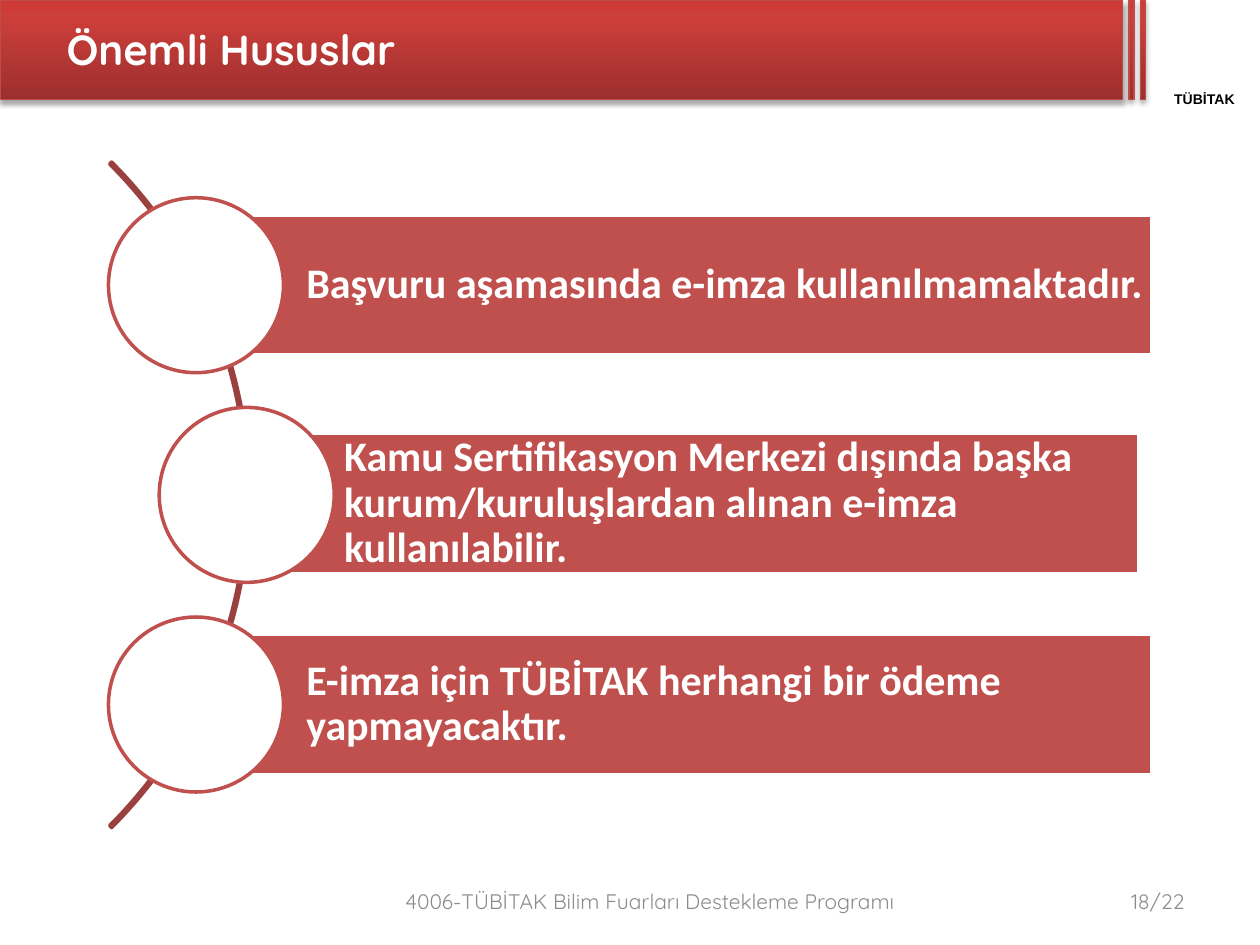
from lxml import etree
from pptx import Presentation
from pptx.dml.color import RGBColor
from pptx.enum.shapes import MSO_SHAPE as Shape
from pptx.enum.text import MSO_ANCHOR as Anchor, PP_ALIGN as Align
from pptx.oxml import parse_xml
from pptx.oxml.ns import nsdecls, qn
from pptx.util import Pt

RED, DARK_RED, WHITE, GREY = "C0504D", "9A403E", "FFFFFF", "8C8C8C"
HEADER_STOPS = [(0, "9C2F2D"), (80, "CB3E3A"), (100, "CE3B37")]
STATEMENTS = [
    "Başvuru aşamasında e-imza kullanılmamaktadır.",
    "Kamu Sertifikasyon Merkezi dışında başka kurum/kuruluşlardan alınan e-imza kullanılabilir.",
    "E-imza için TÜBİTAK herhangi bir ödeme yapmayacaktır.",
]
ROWS = [(0, 49.6, 10, 546.5), (29, 71.2, 15, 517.7), (0, 49.6, 10, 546.5)]


def color(value):
    """Turn a hex string into a colour."""
    return RGBColor.from_string(value)


def add_shape(page, kind, box, fill, line, width):
    """Add a shadowless shape; without a fill colour it stays hollow."""
    shape = page.shapes.add_shape(kind, *map(Pt, box))
    shape.shadow.inherit = False
    if fill:
        shape.fill.solid()
        shape.fill.fore_color.rgb = color(fill)
    else:
        shape.fill.background()
    shape.line.color.rgb = color(line)
    shape.line.width = Pt(width)
    return shape


def write(shape, text, font, size, ink, bold=False, align=Align.LEFT,
          insets=(7.2, 3.6, 7.2, 3.6)):
    """Write one vertically centred, wrapped paragraph into a shape."""
    frame = shape.text_frame
    frame.text = text
    frame.word_wrap = True
    frame.vertical_anchor = Anchor.MIDDLE
    (frame.margin_left, frame.margin_top,
     frame.margin_right, frame.margin_bottom) = map(Pt, insets)
    para = frame.paragraphs[0]
    para.alignment = align
    span = para.runs[0].font
    span.name, span.size, span.bold = font, Pt(size), bold
    span.color.rgb = color(ink)
    return para


def add_text(page, box, *args, **options):
    """Add a text box with one paragraph."""
    write(page.shapes.add_textbox(*map(Pt, box)), *args, **options)


def add_header_bar(page, box):
    """Add a red gradient bar with a soft shadow below."""
    bar = add_shape(page, Shape.RECTANGLE, box, RED, "BF4C48", 0.75)
    stops = "".join(f'<a:gs pos="{pos * 1000}"><a:srgbClr val="{tone}"/></a:gs>'
                    for pos, tone in HEADER_STOPS)
    props = bar.fill._xPr
    props.replace(props.find(qn("a:solidFill")), parse_xml(
        f'<a:gradFill {nsdecls("a")} rotWithShape="1"><a:gsLst>{stops}</a:gsLst>'
        '<a:lin ang="16200000" scaled="0"/></a:gradFill>'))
    shadow = etree.SubElement(props.find(qn("a:effectLst")), qn("a:outerShdw"),
                              blurRad=str(Pt(3.1)), dist=str(Pt(1.8)),
                              dir="5400000", rotWithShape="0")
    black = etree.SubElement(shadow, qn("a:srgbClr"), val="000000")
    etree.SubElement(black, qn("a:alpha"), val="35000")


def add_header(page, left, top, width, height):
    """Place the title bar, its two stripes, the caption and the title."""
    bar_width = width - 78.5
    add_header_bar(page, (left, top, bar_width, height))
    for offset in (3.6, 10.1):
        add_header_bar(page, (left + bar_width + offset, top, 2.9, height))
    add_text(page, (left + width - 68.4, top + 51.8, 73.4, 9.4), "TÜBİTAK",
             "Arial", 8, "000000", True, Align.CENTER, (0, 0, 0, 0))
    add_text(page, (left + 31, top, 612, 55.4), "Önemli Hususlar",
             "Quicksand", 24, WHITE, True)


def add_curved_list(page, left, top, width, height):
    """Place the arc and the three statements with their circles."""
    arc_size = 537.8
    arc = add_shape(page, Shape.BLOCK_ARC,
                    (left + 80.6 - arc_size, top + (height - arc_size) / 2,
                     arc_size, arc_size), None, DARK_RED, 2)
    for index, value in enumerate((189, 27, 0.003)):
        arc.adjustments[index] = value
    circle = 100
    pitch = (height - circle) / (len(STATEMENTS) - 1)
    for index, (text, row) in enumerate(zip(STATEMENTS, ROWS)):
        circle_x, bar_x, bar_y, bar_width = row
        row_top = top + index * pitch
        bar = add_shape(page, Shape.RECTANGLE,
                        (left + bar_x, row_top + bar_y, bar_width, 80), RED, WHITE, 2)
        para = write(bar, text, "Calibri", 24, WHITE, True,
                     insets=(63.4, 4.8, 4.8, 4.8))
        para.line_spacing = 0.9
        add_shape(page, Shape.OVAL, (left + circle_x, row_top, circle, circle),
                  WHITE, RED, 2)


def add_footer(page, left, top, width, height):
    """Place the programme name and the page number."""
    add_text(page, (left, top, 351.4, height),
             "4006-TÜBİTAK Bilim Fuarları Destekleme Programı",
             "Quicksand", 12, GREY, align=Align.CENTER)
    add_text(page, (left + width - 168, top, 168, height), "18/22",
             "Quicksand", 12, GREY, align=Align.RIGHT)


def main():
    """Build the slide and save it."""
    deck = Presentation()
    deck.slide_width, deck.slide_height = Pt(720), Pt(540)
    page = deck.slides.add_slide(deck.slide_layouts[6])
    add_header(page, 0, 0, 720, 57)
    add_curved_list(page, 62, 113, 596, 339.6)
    add_footer(page, 195.8, 500.4, 488.2, 28.8)
    deck.save("out.pptx")


if __name__ == "__main__":
    main()
